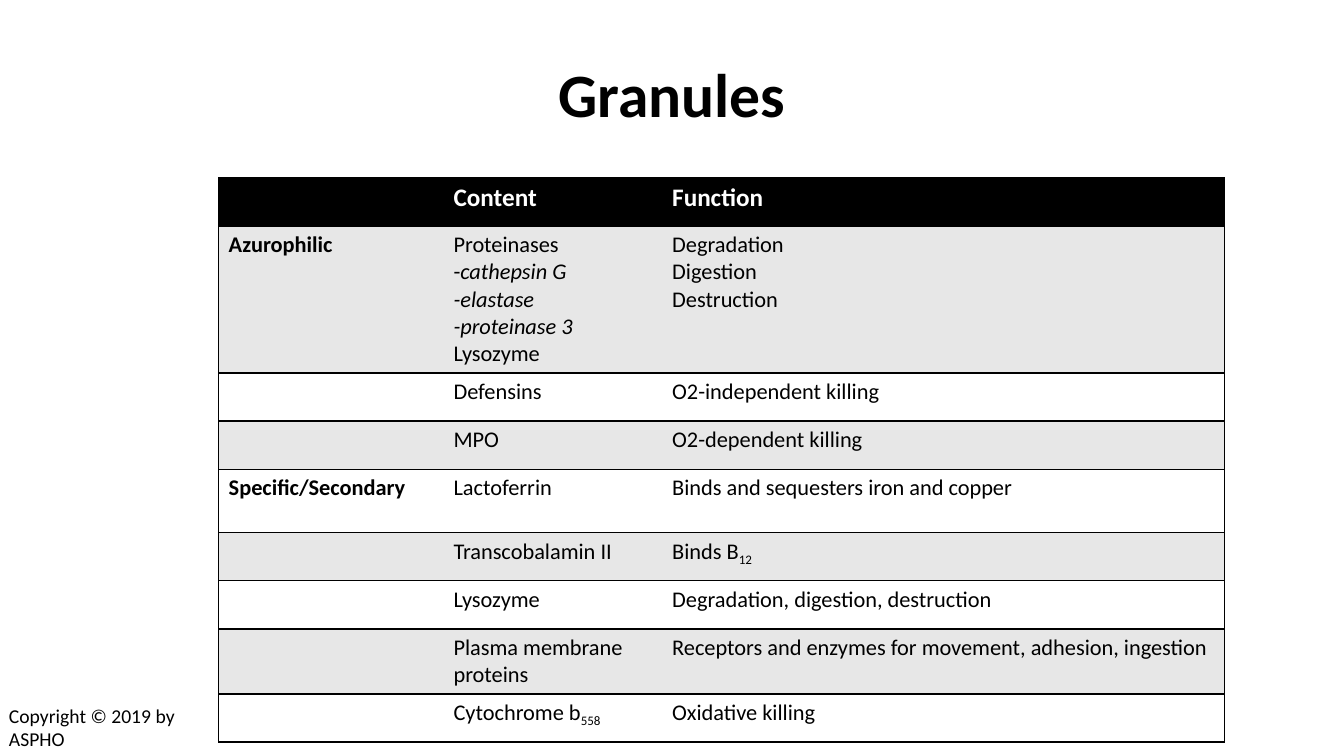
from lxml import etree
from pptx import Presentation
from pptx import util as u
from pptx.dml.color import RGBColor
from pptx.enum import text
from pptx.oxml import parse_xml
from pptx.oxml.ns import nsdecls, qn

BLACK, WHITE, GREY = "000000", "FFFFFF", "E7E7E7"
NO_GRID_STYLE = "{2D5ABB26-0587-4C30-8999-92F81FD0307C}"

HEADER = ["", "Content", "Function"]
# A cell is a list of lines; a line is plain text or a list of (text, format) runs.
GRANULES = [
    ("Azurophilic",
     ["Proteinases", [("-", {}), ("cathepsin G", {"italic": True})],
      [("-elastase", {"italic": True})], [("-proteinase 3", {"italic": True})],
      "Lysozyme"],
     ["Degradation", "Digestion", "Destruction"]),
    ("", ["Defensins"], ["O2-independent killing"]),
    ("", ["MPO"], ["O2-dependent killing"]),
    ("Specific/Secondary", ["Lactoferrin"], ["Binds and sequesters iron and copper"]),
    ("", ["Transcobalamin II"], [[("Binds B", {}), ("12", {"sub": True})]]),
    ("", ["Lysozyme"], ["Degradation, digestion, destruction"]),
    ("", ["Plasma membrane proteins"],
     ["Receptors and enzymes for movement, adhesion, ingestion"]),
    ("", [[("Cytochrome b", {}), ("558", {"sub": True})]], ["Oxidative killing"]),
]
COL_WIDTHS = [160.6, 156.2, 401.8]
ROW_HEIGHTS = [34.4, 105, 34.4, 34.4, 45.4, 34.4, 34.4, 46.4, 34.4]


def rgb(value):
    return RGBColor.from_string(value)


class Deck:
    font = "Calibri"

    def __init__(self, width, height):
        self.prs = Presentation()
        self.prs.slide_width, self.prs.slide_height = u.Pt(width), u.Pt(height)
        self.s = self.prs.slides.add_slide(self.prs.slide_layouts[6])

    def add_lines(self, tf, lines, size, color=BLACK, bold=False, align=None):
        for i, line in enumerate(lines):
            p = tf.paragraphs[0] if i == 0 else tf.add_paragraph()
            p.alignment = align
            for words, fmt in [(line, {})] if isinstance(line, str) else line:
                r = p.add_run()
                r.text = words
                r.font.color.rgb = rgb(color)
                values = {"name": self.font, "size": u.Pt(size), "bold": bold,
                          "italic": fmt.get("italic", False)}
                for key, value in values.items():
                    setattr(r.font, key, value)
                if fmt.get("sub"):
                    r.font._element.set("baseline", "-25000")

    def text(self, box, lines, size, anchor=text.MSO_ANCHOR.TOP, **style):
        sp = self.s.shapes.add_textbox(*map(u.Pt, box))
        tf = sp.text_frame
        tf.word_wrap, tf.vertical_anchor = True, anchor
        self.add_lines(tf, lines, size, **style)

    def border(self, cell, sides):
        """Draw 1 pt lines on the given sides, in L, R, T, B order."""
        tc_pr = cell._tc.get_or_add_tcPr()
        for side in sides:
            ln = parse_xml(f'<a:ln{side} {nsdecls("a")} w="12700"/>')
            fill = etree.SubElement(ln, qn("a:solidFill"))
            etree.SubElement(fill, qn("a:srgbClr"), val=BLACK)
            tc_pr.append(ln)

    def table(self, left, top, widths, heights):
        frame = self.s.shapes.add_table(
            len(heights), len(widths), u.Pt(left), u.Pt(top),
            u.Pt(sum(widths)), u.Pt(sum(heights)))
        tbl = frame.table
        tbl._tbl.tblPr.find(qn("a:tableStyleId")).text = NO_GRID_STYLE
        tbl.first_row = tbl.horz_banding = False
        for col, width in zip(tbl.columns, widths):
            col.width = u.Pt(width)
        for row, height in zip(tbl.rows, heights):
            row.height = u.Pt(height)
        return tbl

    def cell(self, cell, lines, fill, sides, size, **style):
        self.border(cell, sides)
        cell.fill.solid()
        cell.fill.fore_color.rgb = rgb(fill)
        if any(lines):
            self.add_lines(cell.text_frame, lines, size, **style)


def main():
    deck = Deck(960, 540)
    deck.text((48, 21.6, 864, 90), ["Granules"], 44, text.MSO_ANCHOR.MIDDLE,
              bold=True, align=text.PP_ALIGN.CENTER)

    tbl = deck.table(156.2, 127, COL_WIDTHS, ROW_HEIGHTS)
    sides = ["LTB", "TB", "RTB"]
    for c, label in enumerate(HEADER):
        deck.cell(tbl.cell(0, c), [label], BLACK, sides[c], 18, color=WHITE, bold=True)
    for r, (group, content, function) in enumerate(GRANULES, 1):
        fill = GREY if r % 2 else WHITE
        for c, lines in enumerate([[group], content, function]):
            deck.cell(tbl.cell(r, c), lines, fill, sides[c], 16, bold=c == 0)

    deck.text((-0.7, 499, 144.7, 41), ["Copyright © 2019 by ASPHO"], 14)
    deck.prs.save("out.pptx")


if __name__ == "__main__":
    main()
